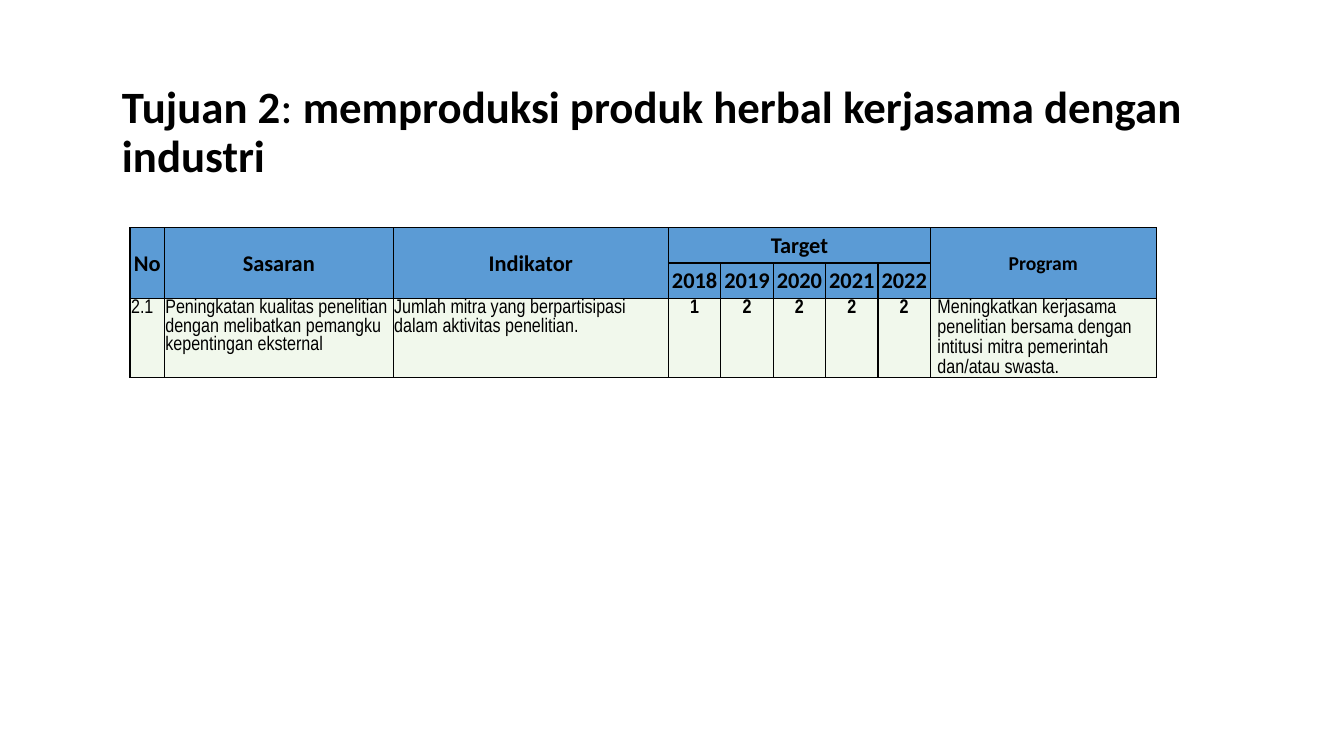
from lxml.etree import SubElement
from pptx import Presentation
from pptx.dml.color import RGBColor
from pptx.enum.text import MSO_ANCHOR, MSO_AUTO_SIZE, PP_ALIGN
from pptx.oxml.ns import qn
from pptx.util import Inches, Pt

BLACK = RGBColor(0x00, 0x00, 0x00)
HEADER_BLUE = RGBColor(0x5B, 0x9B, 0xD5)
BODY_GREEN = RGBColor(0xF1, 0xF8, 0xEC)

COLUMN_WIDTHS = [0.34, 2.27, 2.73] + [0.52] * 5 + [2.24]
ROW_HEIGHT = 0.35
YEAR_COLUMNS = range(3, 8)
PROGRAM_COLUMN = 8
HEADER_MARGINS = (0.01, 0.01, 0.01, 0)
TARGET_MARGINS = (0.07, 0, 0.07, 0)

ROWS = [
    ["No", "Sasaran", "Indikator", "Target", "", "", "", "", "Program"],
    ["", "", "", "2018", "2019", "2020", "2021", "2022", ""],
    ["2.1",
     "Peningkatan kualitas penelitian dengan melibatkan pemangku kepentingan eksternal",
     "Jumlah mitra yang berpartisipasi dalam aktivitas penelitian.",
     "1", "2", "2", "2", "2",
     "Meningkatkan kerjasama penelitian bersama dengan intitusi mitra "
     "pemerintah dan/atau swasta."],
]


def format_font(font, name, size, bold):
    font.name = name
    font.size = Pt(size)
    font.bold = bold
    font.color.rgb = BLACK


def add_title(slide, left, top, width, height):
    title = slide.shapes.title
    title.left, title.top = Inches(left), Inches(top)
    title.width, title.height = Inches(width), Inches(height)
    text_frame = title.text_frame
    text_frame.auto_size = MSO_AUTO_SIZE.NONE
    text_frame.vertical_anchor = MSO_ANCHOR.MIDDLE
    paragraph = text_frame.paragraphs[0]
    paragraph.alignment = PP_ALIGN.LEFT
    paragraph.line_spacing = 0.9
    for text, bold in [
        ("Tujuan 2", True),
        (": ", False),
        ("memproduksi produk herbal kerjasama dengan industri", True),
    ]:
        run = paragraph.add_run()
        run.text = text
        format_font(run.font, "Calibri", 32, bold)


def add_borders(cell):
    properties = cell._tc.get_or_add_tcPr()
    for side in ("a:lnL", "a:lnR", "a:lnT", "a:lnB"):
        line = SubElement(properties, qn(side), w=str(Pt(1)))
        fill = SubElement(line, qn("a:solidFill"))
        SubElement(fill, qn("a:srgbClr"), val=str(BLACK))


def fill_cell(cell, text, color, margins):
    """Set the look of a cell and return its paragraph."""
    add_borders(cell)
    cell.fill.solid()
    cell.fill.fore_color.rgb = color
    left, top, right, bottom = map(Inches, margins)
    cell.margin_left, cell.margin_top = left, top
    cell.margin_right, cell.margin_bottom = right, bottom
    cell.text_frame.text = text
    return cell.text_frame.paragraphs[0]


def format_header_cell(cell, text, size):
    paragraph = fill_cell(cell, text, HEADER_BLUE, HEADER_MARGINS)
    cell.vertical_anchor = MSO_ANCHOR.MIDDLE
    paragraph.alignment = PP_ALIGN.CENTER
    format_font(paragraph.font, "Calibri", size, True)


def format_body_cell(cell, text, column):
    is_year = column in YEAR_COLUMNS
    is_spaced = is_year or column == PROGRAM_COLUMN
    margins = TARGET_MARGINS if is_spaced else HEADER_MARGINS
    paragraph = fill_cell(cell, text, BODY_GREEN, margins)
    cell.vertical_anchor = MSO_ANCHOR.TOP
    paragraph.alignment = PP_ALIGN.CENTER if is_year else PP_ALIGN.LEFT
    if is_spaced:
        paragraph.line_spacing = 1.07
    format_font(paragraph.font, "Arial Narrow", 14, is_year)


def add_target_table(slide, left, top, width, height):
    table = slide.shapes.add_table(
        len(ROWS), len(COLUMN_WIDTHS),
        Inches(left), Inches(top), Inches(width), Inches(height),
    ).table
    for column, column_width in zip(table.columns, COLUMN_WIDTHS):
        column.width = Inches(column_width)
    for row in table.rows:
        row.height = Inches(ROW_HEIGHT)

    for row_index, texts in enumerate(ROWS):
        for column, text in enumerate(texts):
            cell = table.cell(row_index, column)
            if row_index < 2:
                size = 14 if column == PROGRAM_COLUMN else 16
                format_header_cell(cell, text, size)
            else:
                format_body_cell(cell, text, column)

    for column in (0, 1, 2, PROGRAM_COLUMN):
        table.cell(0, column).merge(table.cell(1, column))
    table.cell(0, YEAR_COLUMNS[0]).merge(table.cell(0, YEAR_COLUMNS[-1]))


def main():
    presentation = Presentation()
    presentation.slide_width = Inches(13.33)
    presentation.slide_height = Inches(7.5)
    slide = presentation.slides.add_slide(presentation.slide_layouts[5])
    add_title(slide, 1.11, 0.97, 11.5, 0.71)
    add_target_table(slide, 1.29, 2.26, sum(COLUMN_WIDTHS), 1.71)
    presentation.save("out.pptx")


if __name__ == "__main__":
    main()
